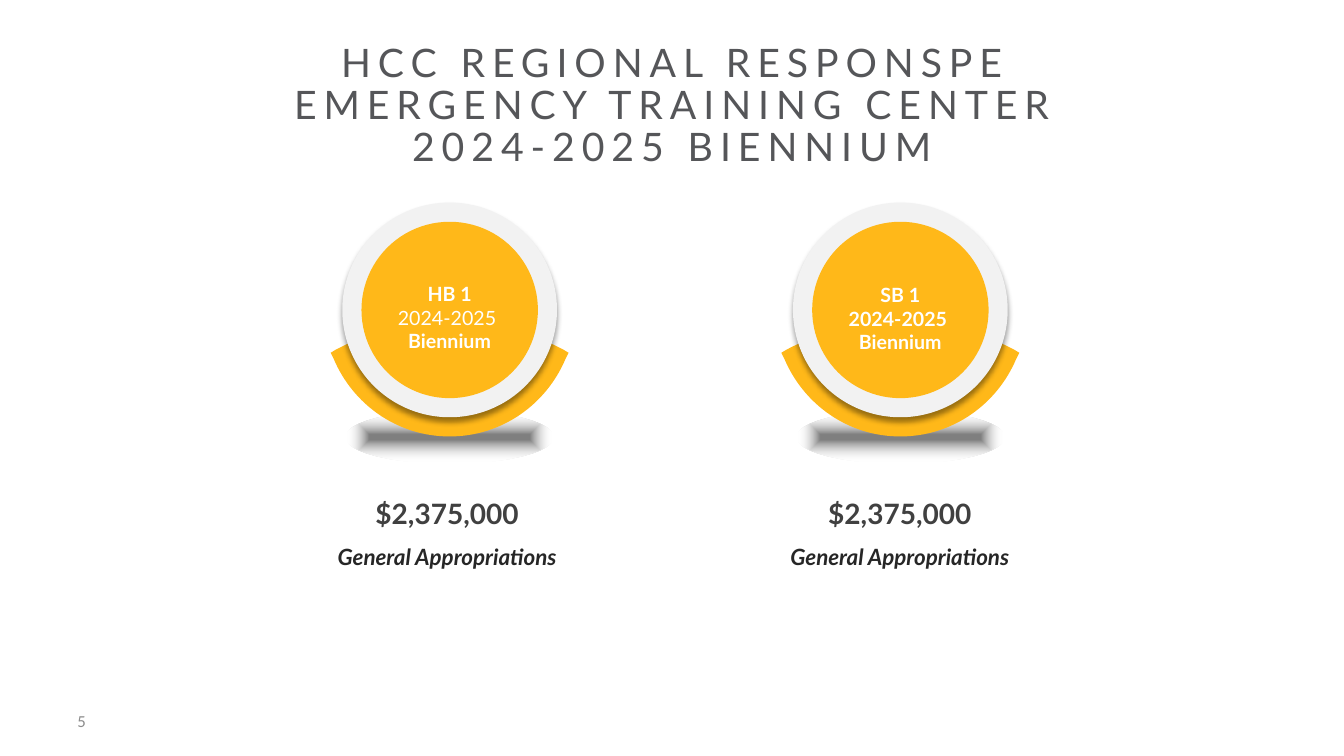
from lxml import etree
from pptx import Presentation
from pptx.dml.color import RGBColor
from pptx.enum.shapes import MSO_SHAPE as SHAPE
from pptx.enum.text import MSO_ANCHOR as ANCHOR, MSO_AUTO_SIZE as FIT, PP_ALIGN as ALIGN
from pptx.oxml import parse_xml
from pptx.oxml.ns import nsdecls, qn
from pptx.util import Inches, Pt

# Content
TITLE = ["HCC REGIONAL RESPONSPE", "EMERGENCY TRAINING CENTER", "2024-2025 BIENNIUM"]
PAGE = "5"
AMOUNT, FUND = "$2,375,000", "General Appropriations"
# Centre, lines of the label (text, bold), label top and width, amount left and width
BILLS = [
    (8.93, [("SB 1", True), ("2024-2025 ", True), ("Biennium", True)], (2.76, 1.87), (7.32, 3.21)),
    (4.46, [("HB 1", True), ("2024-2025 ", False), ("Biennium", True)], (2.75, 2.06), (3.06, 2.75)),
]

# Badge geometry: top, width, height; the cradle is given as its right half
FLOOR = (4.07, 2.06, 0.53)
RING = (2.01, 2.13, 2.13)
DISC = (2.2, 1.75, 1.75)
CRADLE_TOP = 3.19
RIM_CURVE = [(0, 0), (0.41, 0), (0.79, 0.1), (1.13, 0.28)]
TIP = (1.18, 0.31)
BOWL_CURVE = [(1.15, 0.37), (0.96, 0.82), (0.52, 1.14), (0, 1.14)]
CRADLE_STEPS = "CLLCCLLC"  # C is a curve of three points, L a straight line

GOLD, PALE, WHITE = "FFB819", "F2F2F2", "FFFFFF"
FLOOR_GRADIENT = f"""<a:gradFill {nsdecls('a')} rotWithShape="1"><a:gsLst>
<a:gs pos="10000"><a:srgbClr val="808080"/></a:gs>
<a:gs pos="93000"><a:srgbClr val="FFFFFF"><a:alpha val="0"/></a:srgbClr></a:gs></a:gsLst>
<a:path path="shape"><a:fillToRect l="50000" t="50000" r="50000" b="50000"/></a:path></a:gradFill>"""


def color(value):
    return RGBColor.from_string(value)


def plain(shape, fill):
    shape.shadow.inherit = False
    shape.line.fill.background()
    shape.fill.solid()
    shape.fill.fore_color.rgb = color(fill)
    return shape


def ellipse(badge, centre, place, fill):
    top, width, height = place
    return plain(badge.shapes.add_shape(SHAPE.OVAL, Inches(centre - width / 2), Inches(top),
                                        Inches(width), Inches(height)), fill)


def cradle(badge, centre):
    right = RIM_CURVE + [TIP] + BOWL_CURVE
    left = [(-x, y) for x, y in reversed(right)]
    outline = [(Inches(centre + x), Inches(CRADLE_TOP + y)) for x, y in right + left[1:]]
    builder = badge.shapes.build_freeform(*outline[0])
    builder.add_line_segments(outline[1:], close=True)
    shape = plain(builder.convert_to_shape(), GOLD)
    # Turn each run of three points that belongs to a curve into one Bezier step
    lines = iter(list(shape._element.iter(qn("a:lnTo"))))
    for step in CRADLE_STEPS:
        first = next(lines)
        if step == "C":
            first.tag = qn("a:cubicBezTo")
            for other in (next(lines), next(lines)):
                first.append(other[0])
                other.getparent().remove(other)


def add_line(frame, index, text, size, ink, align=ALIGN.CENTER, font="Lato",
             bold=False, italic=False, spacing=None):
    paragraph = frame.add_paragraph() if index else frame.paragraphs[0]
    paragraph.alignment = align
    if spacing:
        paragraph.line_spacing = spacing
    run = paragraph.add_run()
    run.text = text
    run.font.name, run.font.size = font, Pt(size)
    run.font.bold, run.font.italic = bold, italic
    run.font.color.rgb = color(ink)
    return run


def text_frame(left, top, width, height):
    frame = slide.shapes.add_textbox(*map(Inches, (left, top, width, height))).text_frame
    frame.word_wrap = True
    return frame


deck = Presentation()
deck.slide_width, deck.slide_height = Inches(13.33), Inches(7.5)
slide = deck.slides.add_slide(deck.slide_layouts[5])

# Title
title = slide.shapes.title
title.left, title.top, title.width, title.height = map(Inches, (0, 0.38, 13.33, 0.57))
heading = title.text_frame
heading.auto_size, heading.vertical_anchor = FIT.NONE, ANCHOR.TOP
for index, text in enumerate(TITLE):
    run = add_line(heading, index, text, 28, "555659", spacing=0.9)
    heading.paragraphs[index].space_before = Pt(0)
    run.font._element.set("spc", "500")

# Badges, one for each bill
for centre, *_ in BILLS:
    badge = slide.shapes.add_group_shape()
    floor = ellipse(badge, centre, FLOOR, WHITE)
    solid = floor._element.spPr.find(qn("a:solidFill"))
    solid.getparent().replace(solid, parse_xml(FLOOR_GRADIENT))
    cradle(badge, centre)
    ring = ellipse(badge, centre, RING, PALE)
    drop = etree.SubElement(ring._element.spPr.find(qn("a:effectLst")), qn("a:outerShdw"),
                            blurRad=str(Pt(4)), dist=str(Pt(3)), dir="5400000",
                            algn="t", rotWithShape="0")
    shade = etree.SubElement(drop, qn("a:srgbClr"), val="000000")
    etree.SubElement(shade, qn("a:alpha"), val="40000")
    ellipse(badge, centre, DISC, GOLD)

# Labels
for centre, label, (top, width), _ in BILLS:
    frame = text_frame(centre - width / 2, top, width, 0.81)
    frame.auto_size = FIT.SHAPE_TO_FIT_TEXT
    for index, (text, bold) in enumerate(label):
        add_line(frame, index, text, 14, WHITE, bold=bold)

# Amounts, from left to right
for *_, (left, width) in reversed(BILLS):
    frame = text_frame(left, 4.71, width, 1.01)
    frame.auto_size = FIT.SHAPE_TO_FIT_TEXT
    add_line(frame, 0, AMOUNT, 20, "404040", bold=True, spacing=1.5)
    add_line(frame, 1, FUND, 16, "262626", bold=True, italic=True, spacing=1.5)

# Page number
frame = text_frame(0.67, 6.95, 3, 0.4)
frame.vertical_anchor = ANCHOR.MIDDLE
add_line(frame, 0, PAGE, 12, "8C8C8C", align=ALIGN.LEFT, font="Calibri")

deck.save("out.pptx")
